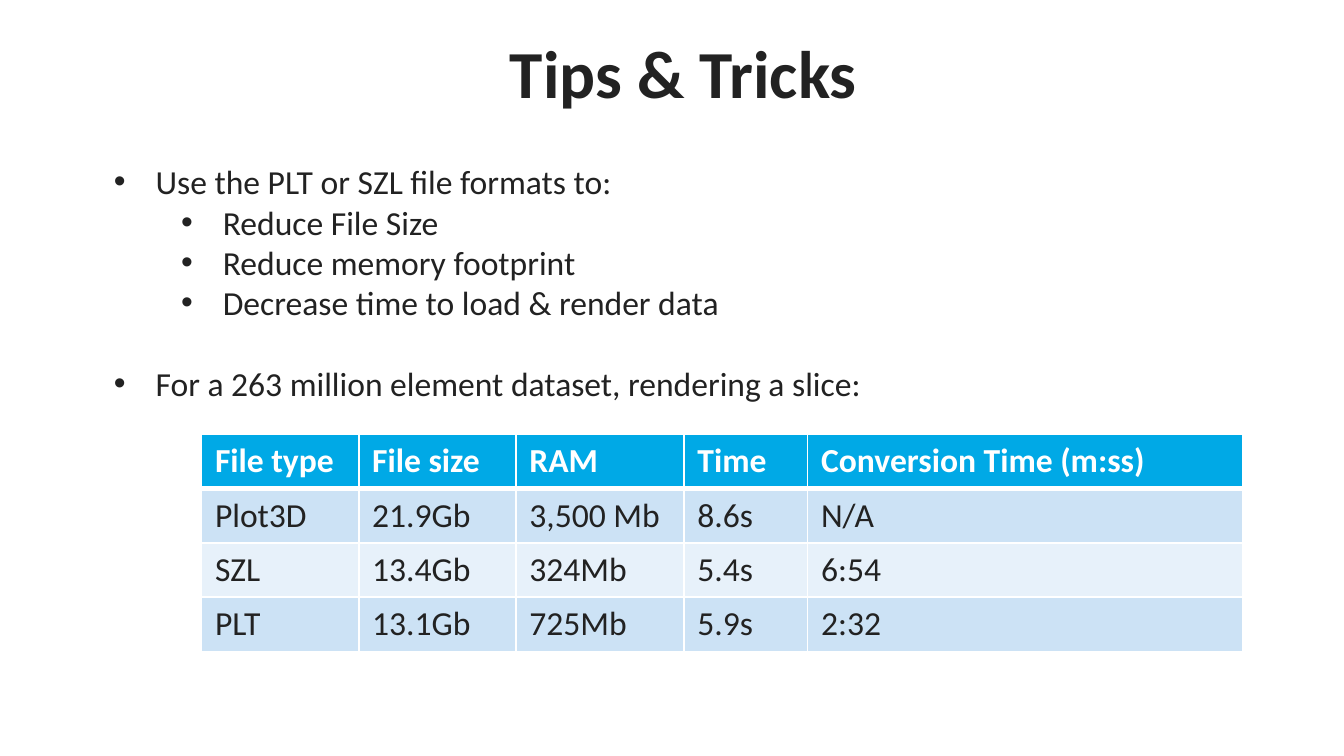
from pptx import Presentation
from pptx.dml.color import RGBColor
from pptx.enum.text import MSO_ANCHOR, PP_ALIGN
from pptx.oxml.ns import qn
from pptx.util import Inches, Pt
from lxml.etree import SubElement

INK = RGBColor(0x22, 0x22, 0x22)
WHITE = RGBColor(0xFF, 0xFF, 0xFF)
HEADER = RGBColor(0x00, 0xA9, 0xE6)
BANDS = (RGBColor(0xCC, 0xE2, 0xF5), RGBColor(0xE7, 0xF1, 0xFA))

BODY = {"name": "Calibri", "size": Pt(18), "bold": False}
TITLE = {"name": "Calibri", "size": Pt(36), "bold": True}

# level, text, space before in points
BULLETS = [
    (0, "Use the PLT or SZL file formats to:", 0),
    (1, "Reduce File Size", 0),
    (1, "Reduce memory footprint", 0),
    (1, "Decrease time to load & render data", 0),
    (0, "For a 263 million element dataset, rendering a slice:", 21.6),
]
COLUMN_WIDTHS = (1.17, 1.17, 1.25, 0.92, 3.24)
TABLE_HEIGHT = 1.62
ROWS = [
    ("File type", "File size", "RAM", "Time", "Conversion Time (m:ss)"),
    ("Plot3D", "21.9Gb", "3,500 Mb", "8.6s", "N/A"),
    ("SZL", "13.4Gb", "324Mb", "5.4s", "6:54"),
    ("PLT", "13.1Gb", "725Mb", "5.9s", "2:32"),
]


def write(p, text, font, color):
    r = p.add_run()
    r.text = text
    for name, value in font.items():
        setattr(r.font, name, value)
    r.font.color.rgb = color


def add_text_frame(s, left, top, width, height):
    box = s.shapes.add_textbox(Inches(left), Inches(top), Inches(width), Inches(height))
    box.text_frame.word_wrap = True
    return box.text_frame


def add_title(s):
    tf = add_text_frame(s, 1.92, 0.15, 6.33, 0.77)
    tf.vertical_anchor = MSO_ANCHOR.MIDDLE
    p = tf.paragraphs[0]
    p.alignment = PP_ALIGN.CENTER
    write(p, "Tips & Tricks", TITLE, INK)


def set_bullet(p, level):
    p.level = level
    pPr = p._p.get_or_add_pPr()
    pPr.set("marL", str(Inches(0.31 + 0.5 * level)))
    pPr.set("indent", str(-Inches(0.31)))
    SubElement(pPr, qn("a:buFont"), typeface="Arial")
    SubElement(pPr, qn("a:buChar"), char="•")


def add_bullets(s):
    tf = add_text_frame(s, 0.75, 1.15, 7.17, 2.22)
    for i, (level, text, gap) in enumerate(BULLETS):
        p = tf.add_paragraph() if i else tf.paragraphs[0]
        set_bullet(p, level)
        if gap:
            p.space_before = Pt(gap)
        write(p, text, BODY, INK)


def set_borders(cell, **widths):
    """Draw white borders; widths maps the sides L, R, T and B to points."""
    tcPr = cell._tc.get_or_add_tcPr()
    for side, width in widths.items():
        ln = SubElement(tcPr, qn(f"a:ln{side}"), w=str(Pt(width)))
        fill = SubElement(ln, qn("a:solidFill"))
        SubElement(fill, qn("a:srgbClr"), val=str(WHITE))


def add_comparison_table(s):
    table = s.shapes.add_table(
        len(ROWS), len(COLUMN_WIDTHS), Inches(1.5), Inches(3.23),
        Inches(sum(COLUMN_WIDTHS)), Inches(TABLE_HEIGHT)).table
    for column, width in zip(table.columns, COLUMN_WIDTHS):
        column.width = Inches(width)
    for i, row in enumerate(ROWS):
        is_header = i == 0
        for j, text in enumerate(row):
            cell = table.cell(i, j)
            set_borders(cell, L=1, R=1, T=3 if i == 1 else 1, B=3 if is_header else 1)
            cell.fill.solid()
            cell.fill.fore_color.rgb = HEADER if is_header else BANDS[(i - 1) % 2]
            write(cell.text_frame.paragraphs[0], text,
                  {**BODY, "bold": is_header}, WHITE if is_header else INK)


def main():
    prs = Presentation()
    prs.slide_width = Inches(10)
    prs.slide_height = prs.slide_width * 9 // 16
    s = prs.slides.add_slide(prs.slide_layouts[6])
    add_title(s)
    add_bullets(s)
    add_comparison_table(s)
    prs.save("out.pptx")


if __name__ == "__main__":
    main()
